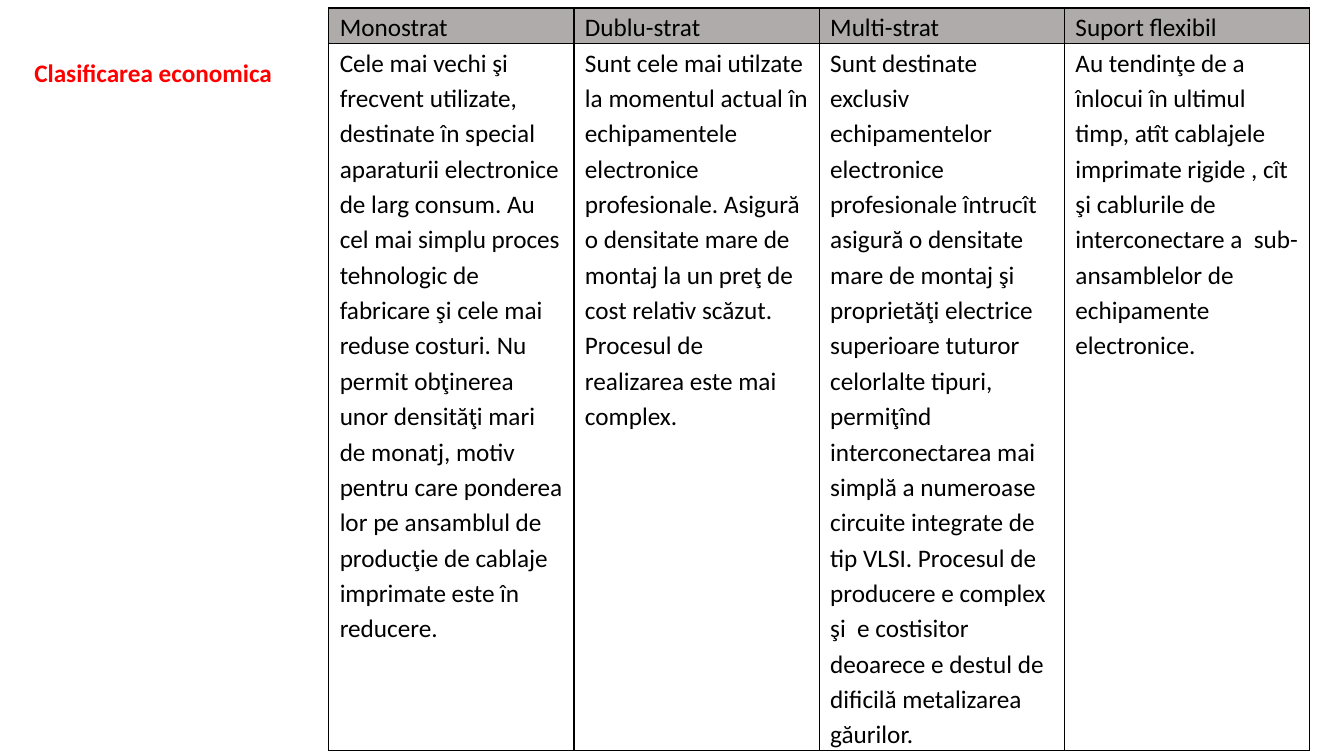
"""Build a slide with the economic classification of printed circuit boards."""
from lxml.etree import SubElement
from pptx import Presentation
from pptx.dml.color import RGBColor
from pptx.enum.text import MSO_ANCHOR, PP_ALIGN
from pptx.oxml.ns import qn
from pptx.util import Inches, Pt

TITLE = "Clasificarea economica"
BOARD_TYPES = [
    ("Monostrat",
     "Cele mai vechi şi frecvent utilizate, destinate în special aparaturii "
     "electronice de larg consum. Au cel mai simplu proces tehnologic de "
     "fabricare şi cele mai reduse costuri. Nu permit obţinerea unor densităţi "
     "mari de monatj, motiv pentru care ponderea lor pe ansamblul de producţie "
     "de cablaje imprimate este în reducere."),
    ("Dublu-strat",
     "Sunt cele mai utilzate la momentul actual în echipamentele electronice "
     "profesionale. Asigură o densitate mare de montaj la un preţ de cost "
     "relativ scăzut. Procesul de realizarea este mai complex."),
    ("Multi-strat",
     "Sunt destinate exclusiv echipamentelor electronice profesionale întrucît "
     "asigură o densitate mare de montaj şi proprietăţi electrice superioare "
     "tuturor celorlalte tipuri, permiţînd interconectarea mai simplă a "
     "numeroase circuite integrate de tip VLSI. Procesul de producere e complex "
     "şi  e costisitor deoarece e destul de dificilă metalizarea găurilor."),
    ("Suport flexibil",
     "Au tendinţe de a înlocui în ultimul timp, atît cablajele imprimate rigide "
     ", cît şi cablurile de interconectare a  sub-ansamblelor de echipamente "
     "electronice."),
]
BLACK = RGBColor(0x00, 0x00, 0x00)
RED = RGBColor(0xFF, 0x00, 0x00)
GRAY = RGBColor(0xAF, 0xAB, 0xAB)
TABLE_LEFT, TABLE_TOP, TABLE_WIDTH = 3.26, 0.08, 9.73
ROW_HEIGHTS = (0.35, 6.99)


def add_run(paragraph, text, color, bold=False):
    """Add one formatted run to a paragraph."""
    run = paragraph.add_run()
    run.text = text
    run.font.name = "Calibri"
    run.font.size = Pt(18)
    run.font.bold = bold
    run.font.color.rgb = color


def add_borders(cell):
    """Draw a thin black line on all four sides of a cell."""
    properties = cell._tc.get_or_add_tcPr()
    for side in ("a:lnL", "a:lnR", "a:lnT", "a:lnB"):
        line = SubElement(properties, qn(side), w=str(Pt(1)))
        fill = SubElement(line, qn("a:solidFill"))
        SubElement(fill, qn("a:srgbClr"), val=str(BLACK))


def fill_cell(cell, text, is_header):
    """Write and format one table cell."""
    add_borders(cell)
    if is_header:
        cell.fill.solid()
        cell.fill.fore_color.rgb = GRAY
    else:
        cell.fill.background()
    cell.margin_left = cell.margin_right = Inches(0.11)
    cell.margin_top = cell.margin_bottom = 0
    paragraph = cell.text_frame.paragraphs[0]
    paragraph.line_spacing = 1.15
    add_run(paragraph, text, BLACK)


def add_title(slide):
    """Place the title to the left of the table."""
    title = slide.shapes.title
    title.left, title.top = Inches(0.24), Inches(0.52)
    title.width, title.height = Inches(2.7), Inches(0.4)
    title.text_frame.vertical_anchor = MSO_ANCHOR.TOP
    paragraph = title.text_frame.paragraphs[0]
    paragraph.alignment = PP_ALIGN.LEFT
    add_run(paragraph, TITLE, RED, bold=True)


def add_board_table(slide):
    """Add the table with one column for each board type."""
    frame = slide.shapes.add_table(
        len(ROW_HEIGHTS), len(BOARD_TYPES), Inches(TABLE_LEFT), Inches(TABLE_TOP),
        Inches(TABLE_WIDTH), Inches(sum(ROW_HEIGHTS)))
    table = frame.table
    table.first_row = table.horz_banding = False
    for row, height in zip(table.rows, ROW_HEIGHTS):
        row.height = Inches(height)
    for column, texts in enumerate(BOARD_TYPES):
        for row, text in enumerate(texts):
            fill_cell(table.cell(row, column), text, is_header=row == 0)


def main():
    """Create and save the presentation."""
    presentation = Presentation()
    presentation.slide_width = Inches(13.33)
    presentation.slide_height = Inches(7.5)
    slide = presentation.slides.add_slide(presentation.slide_layouts[5])
    add_board_table(slide)
    add_title(slide)
    presentation.save("out.pptx")


if __name__ == "__main__":
    main()
